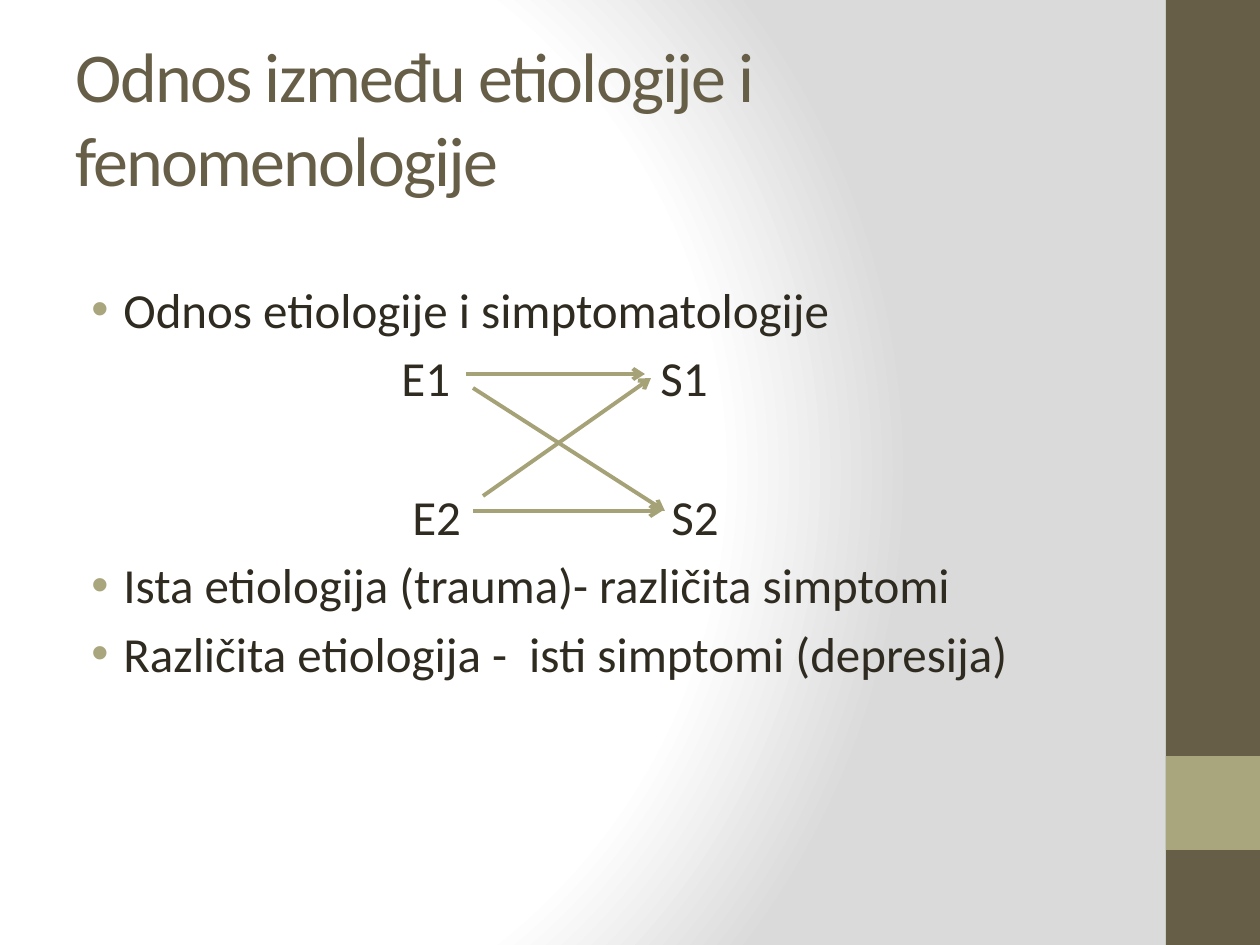
from lxml.etree import SubElement
from pptx import Presentation
from pptx.dml.color import RGBColor
from pptx.enum.shapes import MSO_CONNECTOR, MSO_SHAPE
from pptx.enum.text import MSO_ANCHOR, MSO_AUTO_SIZE, PP_ALIGN
from pptx.oxml import parse_xml
from pptx.oxml.ns import nsdecls, qn
from pptx.util import Pt

EMU_PER_PX = 914400 / 126
BROWN = RGBColor(0x67, 0x5E, 0x47)
OLIVE = RGBColor(0xA9, 0xA5, 0x7C)
ARROW = RGBColor(0xA6, 0xA2, 0x78)
INK = RGBColor(0x2F, 0x2B, 0x20)
WHITE = RGBColor(0xFF, 0xFF, 0xFF)
GREY = RGBColor(0xDA, 0xDA, 0xDA)


def px(length):
    return round(length * EMU_PER_PX)


class SlideBuilder:
    font = "Calibri"
    body_size = Pt(28)
    body_gap = Pt(5.6)

    def __init__(self, slide):
        self.slide = slide

    def radial_background(self, stops):
        """Fill the background with a circular gradient centred left of the middle."""
        gradient_stops = "".join(
            f'<a:gs pos="{percent * 1000}"><a:srgbClr val="{color}"/></a:gs>'
            for percent, color in stops)
        fill = self.slide.background.fill
        fill.solid()
        properties = self.slide.element.find(".//" + qn("p:bgPr"))
        properties.replace(properties[0], parse_xml(
            f'<a:gradFill {nsdecls("a")} rotWithShape="1"><a:gsLst>{gradient_stops}</a:gsLst>'
            '<a:path path="circle"><a:fillToRect l="20000" t="50000" r="100000" b="50000"/>'
            '</a:path></a:gradFill>'))

    def band(self, left, top, width, height, color):
        shape = self.slide.shapes.add_shape(
            MSO_SHAPE.RECTANGLE, px(left), px(top), px(width), px(height))
        shape.shadow.inherit = False
        shape.fill.solid()
        shape.fill.fore_color.rgb = color
        shape.line.fill.background()

    def style(self, paragraph, size, color):
        for run in paragraph.runs:
            run.font.name = self.font
            run.font.size = size
            run.font.color.rgb = color

    def title(self, text, left, top, width, height):
        title = self.slide.shapes.title
        title.left, title.top = px(left), px(top)
        title.width, title.height = px(width), px(height)
        frame = title.text_frame
        frame.text = text
        frame.auto_size = MSO_AUTO_SIZE.NONE
        frame.vertical_anchor = MSO_ANCHOR.MIDDLE
        heading = frame.paragraphs[0]
        heading.alignment = PP_ALIGN.LEFT
        self.style(heading, Pt(40), BROWN)
        heading.runs[0].font._element.set("spc", "-100")

    def body(self, lines, left, top, width, height):
        """Add lines of (text, tab stops, space before); a line without stops is a bullet."""
        frame = self.slide.shapes.add_textbox(
            px(left), px(top), px(width), px(height)).text_frame
        frame.word_wrap = True
        for index, (text, stops, gap) in enumerate(lines):
            paragraph = frame.paragraphs[0] if index == 0 else frame.add_paragraph()
            paragraph.text = text
            paragraph.space_before = gap
            self.style(paragraph, self.body_size, INK)
            if stops:
                self.tab_stops(paragraph, stops)
            else:
                self.bullet(paragraph)

    def tab_stops(self, paragraph, stops):
        tabs = SubElement(paragraph._p.get_or_add_pPr(), qn("a:tabLst"))
        for stop in stops:
            SubElement(tabs, qn("a:tab"), pos=str(px(stop)), algn="l")

    def bullet(self, paragraph):
        properties = paragraph._p.get_or_add_pPr()
        properties.set("marL", str(px(48)))
        properties.set("indent", str(px(-32)))
        color = SubElement(properties, qn("a:buClr"))
        SubElement(color, qn("a:srgbClr"), val=str(OLIVE))
        SubElement(properties, qn("a:buFont"), typeface="Arial")
        SubElement(properties, qn("a:buChar"), char="•")

    def arrow(self, start, end):
        connector = self.slide.shapes.add_connector(
            MSO_CONNECTOR.STRAIGHT, *map(px, start + end))
        connector.line.color.rgb = ARROW
        connector.line.width = Pt(2.25)
        SubElement(connector.line._get_or_add_ln(), qn("a:tailEnd"), type="arrow")
        SubElement(connector._element.spPr, qn("a:effectLst"))


def main():
    presentation = Presentation()
    presentation.slide_width, presentation.slide_height = px(1260), px(945)
    builder = SlideBuilder(presentation.slides.add_slide(presentation.slide_layouts[5]))

    builder.radial_background([(0, WHITE), (75, WHITE), (100, GREY)])
    builder.band(1166, 0, 94, 945, BROWN)
    builder.band(1166, 756, 94, 94, OLIVE)
    builder.title("Odnos između etiologije i fenomenologije", 63, 38, 1050, 158)

    gap = builder.body_gap
    builder.body([
        ("Odnos etiologije i simptomatologije", None, gap),
        ("\tE1\tS1", (326, 585), gap),
        ("\tE2\tS2", (337, 596), Pt(45.4)),
        ("Ista etiologija (trauma)- različita simptomi", None, gap),
        ("Različita etiologija -  isti simptomi (depresija)", None, gap),
    ], 63, 273, 1050, 640)

    for start, end in [
        ((466, 374), (645, 374)),
        ((473, 511), (662, 511)),
        ((483, 496), (651, 378)),
        ((473, 388), (665, 511)),
    ]:
        builder.arrow(start, end)

    presentation.save("out.pptx")


if __name__ == "__main__":
    main()
